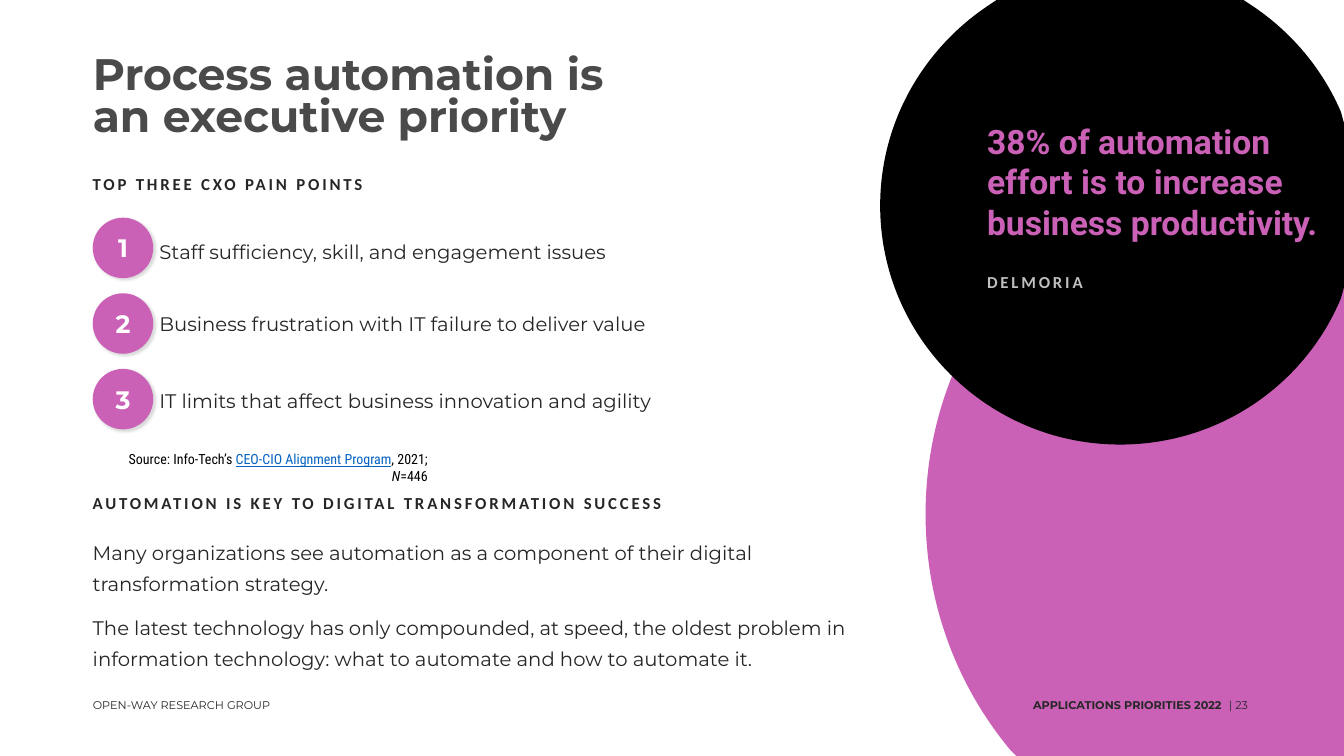
from dataclasses import dataclass

from lxml import etree
from pptx import Presentation
from pptx.dml.color import RGBColor
from pptx.enum.shapes import MSO_SHAPE
from pptx.enum.text import MSO_ANCHOR, PP_ALIGN
from pptx.oxml.ns import qn
from pptx.util import Inches, Pt

OVAL = MSO_SHAPE.OVAL
TOP, MID, LOW = MSO_ANCHOR.TOP, MSO_ANCHOR.MIDDLE, MSO_ANCHOR.BOTTOM
LEFT, CENTER, RIGHT = PP_ALIGN.LEFT, PP_ALIGN.CENTER, PP_ALIGN.RIGHT
WIDTH, HEIGHT = 13.33, 7.5
MARGIN = 0.92
NBSP = chr(160)

# Outlines: two numbers end a line, six give a curve's handles and end
PINK_DISC = (
    (12.85, 1.43),
    (12.98, 1.43, 13.1, 1.43, 13.23, 1.45),
    (WIDTH, 1.46),
    (WIDTH, HEIGHT),
    (10.08, HEIGHT),
    (10.02, 7.44),
    (9.49, 6.8, 9.18, 5.99, 9.18, 5.1),
    (9.18, 3.07, 10.82, 1.43, 12.85, 1.43),
)
BLACK_DISC = (
    (9.9, -0.01),
    (12.32, -0.01),
    (12.44, 0.07),
    (12.82, 0.33, 13.12, 0.69, 13.3, 1.11),
    (WIDTH, 1.22),
    (WIDTH, 2.85),
    (13.3, 2.96),
    (12.94, 3.82, 12.09, 4.41, 11.11, 4.41),
    (9.8, 4.41, 8.73, 3.35, 8.73, 2.04),
    (8.73, 1.22, 9.15, 0.5, 9.78, 0.07),
)


@dataclass(frozen=True)
class Style:
    font: str
    size: float
    color: str
    bold: bool = False
    line: object = None
    track: int = 0


@dataclass(frozen=True)
class Theme:
    pink: str = "CB61B7"
    black: str = "000000"
    link: str = "0563C1"
    title: Style = Style("Montserrat", 31.5, "4A4A4A", True, 0.8)
    quote: Style = Style("Roboto", 24, "CB61B7", True)
    credit: Style = Style("Calibri", 12, "BFBFBF", True, Pt(16), 200)
    head: Style = Style("Calibri", 12, "262626", True, Pt(16), 200)
    body: Style = Style("Montserrat", 14, "262626", False, 1.3)
    badge: Style = Style("Montserrat", 18, "FFFFFF", True)
    source: Style = Style("Roboto Condensed", 10, "000000")
    foot: Style = Style("Montserrat", 8, "262626")
    strong: Style = Style("Montserrat", 8, "262626", True)


THEME = Theme()


def rgb(color):
    return RGBColor.from_string(color)


def paint(shape, color):
    shape.fill.solid()
    shape.fill.fore_color.rgb = rgb(color)
    shape.line.fill.background()
    shape.shadow.inherit = False


def write(frame, parts, style, align=LEFT):
    """Fill a frame with one paragraph per text."""
    for i, text in enumerate(parts):
        para = frame.paragraphs[0] if i == 0 else frame.add_paragraph()
        para.alignment = align
        if i:
            para.space_before = Pt(10)
        if style.line:
            para.line_spacing = style.line
        font = para.font
        font.name, font.size, font.bold = style.font, Pt(style.size), style.bold
        font.color.rgb = rgb(style.color)
        if text:
            run = para.add_run()
            run.text = text
            if style.track:
                run._r.get_or_add_rPr().set("spc", str(style.track))


def add_text(slide, box, parts, style, align=LEFT, anchor=TOP, pad=(0, 0)):
    shape = slide.shapes.add_textbox(*map(Inches, box))
    frame = shape.text_frame
    frame.word_wrap = True
    frame.vertical_anchor = anchor
    frame.margin_left = frame.margin_right = Inches(pad[0])
    frame.margin_top, frame.margin_bottom = Inches(pad[1]), 0
    write(frame, parts, style, align)
    return frame


def add_disc(slide, steps, color):
    """Draw an outline of lines and curves."""
    ends = [tuple(map(Inches, step[-2:])) for step in steps]
    pen = slide.shapes.build_freeform(*ends[0])
    pen.add_line_segments(ends[1:], close=True)
    shape = pen.convert_to_shape()
    paint(shape, color)
    for step, node in zip(steps[1:], list(shape._element.iter(qn("a:lnTo")))):
        if len(step) == 6:
            node.tag = qn("a:cubicBezTo")
            for i in (0, 2):
                handle = etree.Element(
                    qn("a:pt"), x=str(Inches(step[i]) - shape.left),
                    y=str(Inches(step[i + 1]) - shape.top))
                node.insert(i // 2, handle)


def add_shade(shape):
    effects = shape._element.spPr.find(qn("a:effectLst"))
    shade = etree.SubElement(effects, qn("a:outerShdw"), blurRad="25400",
                             dist="25400", dir="2700000", algn="tl",
                             rotWithShape="0")
    color = etree.SubElement(shade, qn("a:srgbClr"), val=THEME.black)
    etree.SubElement(color, qn("a:alpha"), val="15000")


def add_badge(slide, y, number):
    shape = slide.shapes.add_shape(OVAL, Inches(MARGIN), Inches(y),
                                   Inches(0.6), Inches(0.6))
    paint(shape, THEME.pink)
    add_shade(shape)
    shape.text_frame.vertical_anchor = MID
    write(shape.text_frame, [str(number)], THEME.badge, CENTER)


def add_source(slide):
    frame = add_text(slide, (MARGIN, 4.42, 3.42, 0.27), [""], THEME.source,
                     RIGHT, pad=(0.1, 0.05))
    para = frame.paragraphs[0]
    for text in ("Source: Info-Tech’s ", "CEO-CIO Alignment Program",
                 ", 2021; ", "N", "=446"):
        run = para.add_run()
        run.text = text
        if text.startswith("CEO"):
            run.font.underline = True
            run.font.color.rgb = rgb(THEME.link)
        elif text == "N":
            run.font.italic = True


def main():
    deck = Presentation()
    deck.slide_width, deck.slide_height = Inches(WIDTH), Inches(HEIGHT)
    slide = deck.slides.add_slide(deck.slide_layouts[6])

    # Backdrop discs
    add_disc(slide, PINK_DISC, THEME.pink)
    add_disc(slide, BLACK_DISC, THEME.black)

    # Title and quote
    add_text(slide, (MARGIN, 0.7, 7.22, 0.7),
             [f"Process automation is an{NBSP}executive priority"],
             THEME.title, anchor=LOW)
    add_text(slide, (9.79, 0.7, 3.34, 1.7),
             ["38% of automation effort is to increase business productivity."],
             THEME.quote, anchor=LOW)
    add_text(slide, (9.79, 2.57, 2.98, 0.54), ["DELMORIA"], THEME.credit,
             pad=(0, 0.1))

    # Pain points
    add_text(slide, (MARGIN, 1.7, 7.54, 0.24), ["TOP THREE CXO PAIN POINTS"],
             THEME.head)
    points = (
        (2.19, MID, "Staff sufficiency, skill, and engagement issues"),
        (3.02, TOP, "Business frustration with IT failure to deliver value"),
        (3.67, MID, "IT limits that affect business innovation and agility"),
    )
    for i, (y, anchor, text) in enumerate(points):
        add_badge(slide, 2.16 + 0.75 * i, i + 1)
        add_text(slide, (1.58, y, 6.69, 0.54), [text], THEME.body,
                 anchor=anchor)
    add_source(slide)

    # Automation section
    add_text(slide, (MARGIN, 4.87, 7.54, 0.24),
             ["AUTOMATION IS KEY TO DIGITAL TRANSFORMATION SUCCESS"],
             THEME.head)
    add_text(slide, (MARGIN, 5.3, 7.54, 1.28), [
        "Many organizations see automation as a component of their digital "
        "transformation strategy.",
        "The latest technology has only compounded, at speed, the oldest "
        "problem in information technology: what to automate and how to "
        "automate it.",
    ], THEME.body)

    # Footer
    add_text(slide, (MARGIN, 6.93, 2.15, 0.13), ["OPEN-WAY RESEARCH GROUP"],
             THEME.foot)
    add_text(slide, (9.51, 6.93, 2.61, 0.13), ["APPLICATIONS PRIORITIES 2022"],
             THEME.strong, RIGHT)
    add_text(slide, (12.19, 6.93, 0.49, 0.13), ["| 23"], THEME.foot)

    deck.save("out.pptx")


if __name__ == "__main__":
    main()
